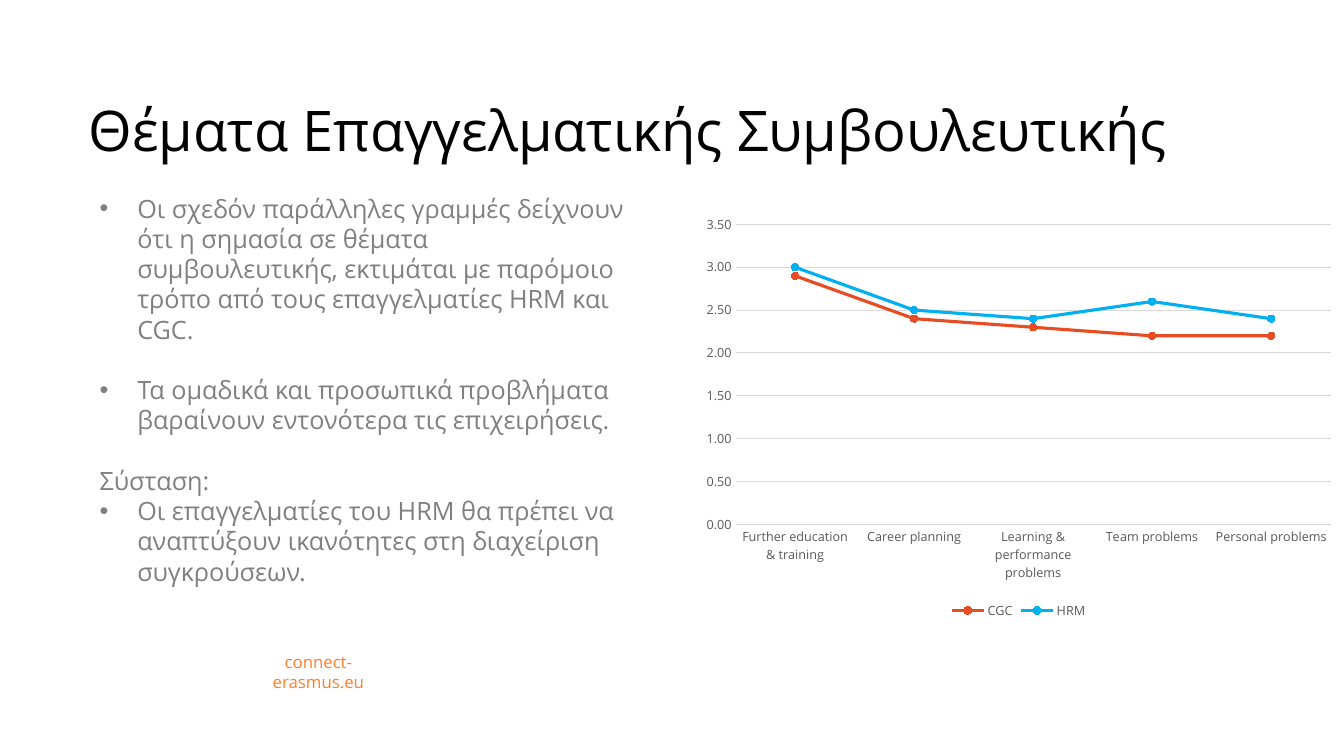
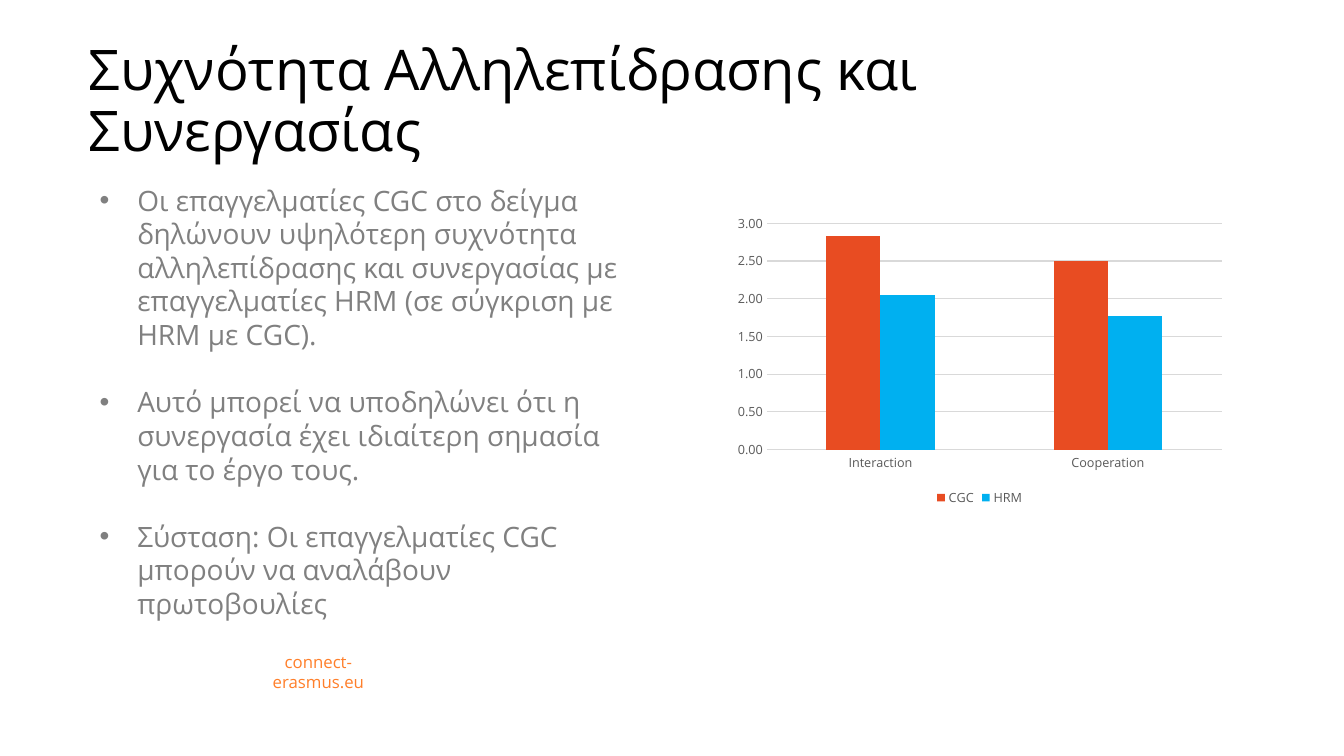
from pptx import Presentation
from pptx.chart.data import CategoryChartData
from pptx.dml.color import RGBColor
from pptx.enum.chart import XL_CHART_TYPE, XL_LEGEND_POSITION, XL_MARKER_STYLE, XL_TICK_MARK
from pptx.enum.text import MSO_ANCHOR, MSO_AUTO_SIZE, PP_ALIGN
from pptx.oxml.ns import qn
from pptx.util import Cm, Pt
from lxml import etree

LINE = XL_CHART_TYPE.LINE_MARKERS
COLUMN = XL_CHART_TYPE.COLUMN_CLUSTERED
BELOW = XL_LEGEND_POSITION.BOTTOM
CIRCLE = XL_MARKER_STYLE.CIRCLE
NO_TICK = XL_TICK_MARK.NONE
TOP, MIDDLE, BOTTOM = MSO_ANCHOR.TOP, MSO_ANCHOR.MIDDLE, MSO_ANCHOR.BOTTOM
NO_FIT = MSO_AUTO_SIZE.NONE
LEFT, CENTER = PP_ALIGN.LEFT, PP_ALIGN.CENTER

BLACK = RGBColor(0x00, 0x00, 0x00)
GRAY = RGBColor(0x80, 0x80, 0x80)
DARK = RGBColor(0x59, 0x59, 0x59)
PALE = RGBColor(0xD9, 0xD9, 0xD9)
ORANGE = RGBColor(0xFF, 0x7F, 0x2A)
RED = RGBColor(0xE8, 0x4C, 0x22)
BLUE = RGBColor(0x00, 0xB0, 0xF0)
FONT = "Open Sans"
INDENT = Cm(0.95)


def write(shape, items, size, color, align=LEFT, anchor=TOP, lines=1.0):
    frame = shape.text_frame
    frame.word_wrap = True
    frame.auto_size = NO_FIT
    frame.vertical_anchor = anchor
    for i, (text, mark, gap) in enumerate(items):
        para = frame.paragraphs[0] if i == 0 else frame.add_paragraph()
        para.text = text
        para.alignment = align
        para.line_spacing = lines
        para.space_before = Pt(size * 1.2 if gap else 0)
        if mark:
            props = para._p.get_or_add_pPr()
            props.set("marL", str(INDENT))
            props.set("indent", str(-INDENT))
            etree.SubElement(props, qn("a:buFont")).set("typeface", "Arial")
            etree.SubElement(props, qn("a:buChar")).set("char", "•")
        para.font.name = FONT
        para.font.size = Pt(size)
        para.font.color.rgb = color


PAGES = [
    {
        "title": "Θέματα Επαγγελματικής Συμβουλευτικής",
        "body": [
            ("Οι σχεδόν παράλληλες γραμμές δείχνουν ότι η σημασία σε θέματα συμβουλευτικής, "
             "εκτιμάται με παρόμοιο τρόπο από τους επαγγελματίες HRM και CGC.", True, False),
            ("Τα ομαδικά και προσωπικά προβλήματα βαραίνουν εντονότερα τις επιχειρήσεις.", True, True),
            ("Σύσταση:", False, True),
            ("Οι επαγγελματίες του HRM θα πρέπει να αναπτύξουν ικανότητες στη διαχείριση "
             "συγκρούσεων.", True, False),
        ],
        "size": 18,
        "place": (Cm(2.26), Cm(4.74), Cm(13.92), Cm(11.3)),
        "kind": LINE,
        "area": (Cm(17.48), Cm(5.22), Cm(16.38), Cm(10.49)),
        "groups": ["Further education & training", "Career planning",
                   "Learning & performance problems", "Team problems", "Personal problems"],
        "series": [("CGC", (2.9, 2.4, 2.3, 2.2, 2.2)), ("HRM", (3, 2.5, 2.4, 2.6, 2.4))],
        "top": 3.5,
    },
    {
        "title": "Συχνότητα Αλληλεπίδρασης και Συνεργασίας",
        "body": [
            ("Οι επαγγελματίες CGC στο δείγμα δηλώνουν υψηλότερη συχνότητα αλληλεπίδρασης και "
             "συνεργασίας με επαγγελματίες HRM (σε σύγκριση με HRM με CGC).", True, False),
            ("Αυτό μπορεί να υποδηλώνει ότι η συνεργασία έχει ιδιαίτερη σημασία για το έργο τους.",
             True, True),
            ("Σύσταση: Οι επαγγελματίες CGC μπορούν να αναλάβουν πρωτοβουλίες", True, True),
        ],
        "size": 20,
        "place": (Cm(2.26), Cm(4.49), Cm(13.92), Cm(11.68)),
        "kind": COLUMN,
        "area": (Cm(18.34), Cm(5.25), Cm(12.7), Cm(7.62)),
        "groups": ["Interaction", "Cooperation"],
        "series": [("CGC", (2.83, 2.5)), ("HRM", (2.05, 1.77))],
        "top": 3,
    },
]

deck = Presentation()
deck.slide_width, deck.slide_height = Cm(33.87), Cm(19.05)

for page in PAGES:
    slide = deck.slides.add_slide(deck.slide_layouts[5])
    title = slide.shapes.title
    title.left, title.top, title.width, title.height = Cm(1.98), Cm(0.18), Cm(29.69), Cm(4.06)
    write(title, [(page["title"], False, False)], 40, BLACK, anchor=BOTTOM, lines=0.9)
    write(slide.shapes.add_textbox(*page["place"]), page["body"], page["size"], GRAY)
    foot = slide.shapes.add_textbox(Cm(5.79), Cm(16.54), Cm(4.47), Cm(0.76))
    write(foot, [("connect-erasmus.eu", False, False)], 12, ORANGE, align=CENTER, anchor=MIDDLE)

    data = CategoryChartData(number_format="###0.00")
    data.categories = page["groups"]
    for name, values in page["series"]:
        data.add_series(name, values)
    chart = slide.shapes.add_chart(page["kind"], *page["area"], data).chart
    chart.has_title = False
    chart.font.name = FONT
    chart.font.size = Pt(9)
    chart.font.color.rgb = DARK
    chart.has_legend = True
    chart.legend.position = BELOW
    chart.legend.include_in_layout = False

    for axis in (chart.category_axis, chart.value_axis):
        axis.major_tick_mark = NO_TICK
        axis.minor_tick_mark = NO_TICK
    edge = chart.category_axis.format.line
    scale = chart.value_axis
    scale.minimum_scale, scale.maximum_scale, scale.major_unit = 0, page["top"], 0.5
    scale.tick_labels.number_format = "###0.00"
    scale.tick_labels.number_format_is_linked = False
    scale.format.line.fill.background()
    for rule in (edge, scale.major_gridlines.format.line):
        rule.color.rgb = PALE
        rule.width = Pt(0.75)

    plot = chart.plots[0]
    plot.vary_by_categories = False
    if page["kind"] == COLUMN:
        plot.gap_width = 219
        plot.overlap = 0
    for series, color in zip(plot.series, (RED, BLUE)):
        if page["kind"] == COLUMN:
            series.format.fill.solid()
            series.format.fill.fore_color.rgb = color
            continue
        series.smooth = False
        series.format.line.color.rgb = color
        series.format.line.width = Pt(2.25)
        series.marker.style = CIRCLE
        series.marker.size = 5
        series.marker.format.fill.solid()
        series.marker.format.fill.fore_color.rgb = color
        series.marker.format.line.color.rgb = color

deck.save("out.pptx")
